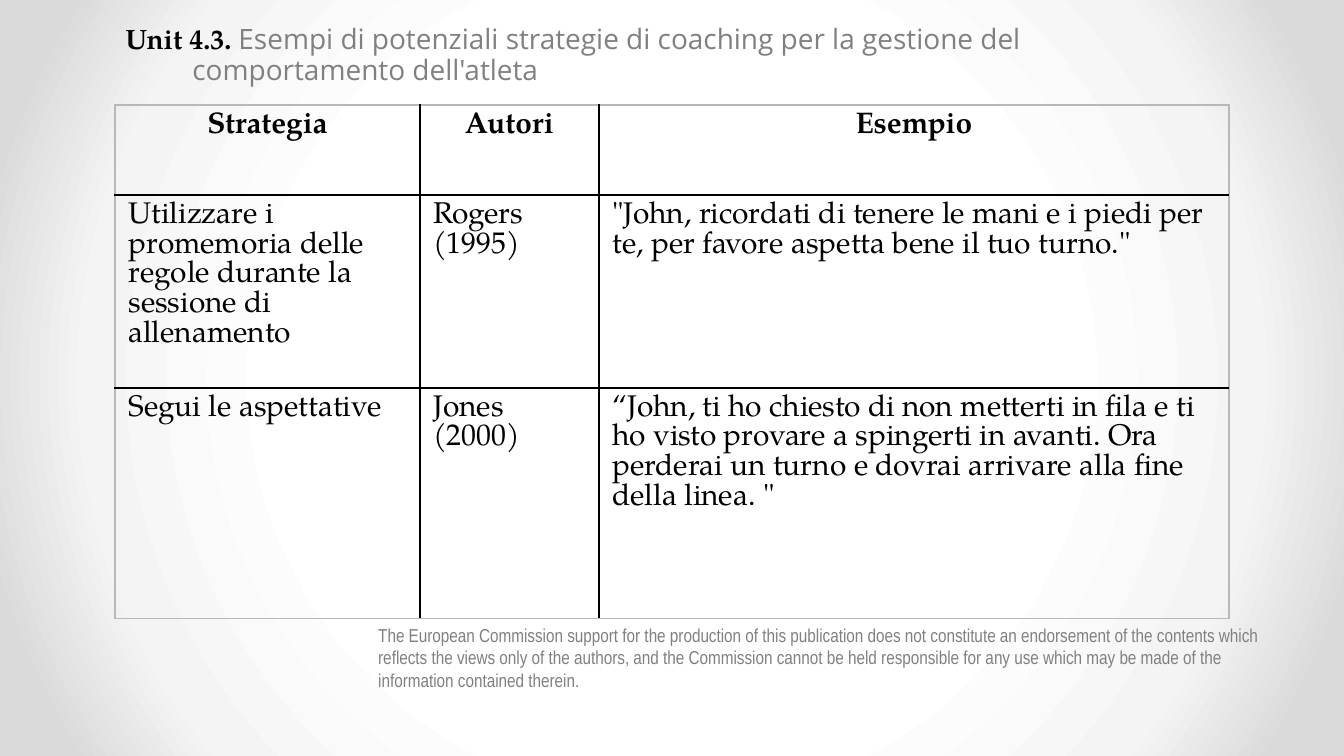
from lxml.etree import SubElement
from pptx import Presentation
from pptx.dml.color import RGBColor
from pptx.enum.text import MSO_ANCHOR, MSO_AUTO_SIZE, PP_ALIGN
from pptx.oxml import parse_xml
from pptx.oxml.ns import nsdecls, qn
from pptx.util import Emu, Pt

PX = 914400 / 134.4
BLACK = RGBColor(0x00, 0x00, 0x00)
GREY = RGBColor(0x80, 0x80, 0x80)
FRAME_GREY = RGBColor(0xB8, 0xB8, 0xB8)
BACKGROUND_STOPS = [
    (50, RGBColor(0xFF, 0xFF, 0xFF)),
    (76, RGBColor(0xF4, 0xF4, 0xF4)),
    (92, RGBColor(0xDA, 0xDA, 0xDA)),
]
SERIF, SANS, NARROW = "TeX Gyre Pagella", "Open Sans", "Arial Narrow"

COLUMN_WIDTHS = [305, 179, 630]
ROW_HEIGHTS = [90, 193, 231]
STRATEGIES = [
    ("Strategia", "Autori", "Esempio"),
    ("Utilizzare i promemoria delle regole durante la sessione di allenamento",
     "Rogers (1995)",
     "\"John, ricordati di tenere le mani e i piedi per te, per favore "
     "aspetta bene il tuo turno.\""),
    ("Segui le aspettative",
     "Jones (2000)",
     "“John, ti ho chiesto di non metterti in fila e ti ho visto provare a "
     "spingerti in avanti. Ora perderai un turno e dovrai arrivare alla fine "
     "della linea. \""),
]
DISCLAIMER = (
    "The European Commission support for the production of this publication "
    "does not constitute an endorsement of the contents which reflects the "
    "views only of the authors, and the Commission cannot be held responsible "
    "for any use which may be made of the information contained therein."
)


def px(length):
    return Emu(round(length * PX))


def add_span(para, text, font_name, size, color, bold=False):
    span = para.add_run()
    span.text = text
    font = span.font
    font.name, font.size, font.bold = font_name, Pt(size), bold
    font.color.rgb = color


def set_background(page):
    """Fill the page with a radial gradient around its centre."""
    page.background.fill.solid()
    properties = page.background._cSld.find(qn("p:bg")).find(qn("p:bgPr"))
    stops = "".join(
        f'<a:gs pos="{position * 1000}"><a:srgbClr val="{color}"/></a:gs>'
        for position, color in BACKGROUND_STOPS
    )
    gradient = parse_xml(
        f'<a:gradFill {nsdecls("a")} rotWithShape="1"><a:gsLst>{stops}</a:gsLst>'
        '<a:path path="circle"><a:fillToRect l="50000" t="50000" r="50000" '
        'b="50000"/></a:path></a:gradFill>'
    )
    properties.replace(properties.find(qn("a:solidFill")), gradient)


def add_title(page):
    title = page.shapes.title
    title.left, title.top, title.width, title.height = map(px, (112, 19, 1093, 82))
    frame = title.text_frame
    frame.word_wrap = True
    frame.auto_size = MSO_AUTO_SIZE.NONE
    frame.vertical_anchor = MSO_ANCHOR.TOP
    para = frame.paragraphs[0]
    para.alignment = PP_ALIGN.LEFT
    para.line_spacing = 0.9
    hanging = px(67)
    properties = para._p.get_or_add_pPr()
    properties.set("marL", str(hanging))
    properties.set("indent", str(-hanging))
    add_span(para, "Unit 4.3. ", SERIF, 15, BLACK, bold=True)
    add_span(para, "Esempi di potenziali strategie di coaching per la gestione "
             "del comportamento dell'atleta", SANS, 15, GREY)


def set_borders(cell, outer_sides):
    """Draw grey lines on the outer sides and black lines on the others."""
    properties = cell._tc.get_or_add_tcPr()
    for index, side in enumerate(("lnL", "lnR", "lnT", "lnB")):
        outer = side in outer_sides
        line = properties.makeelement(
            qn(f"a:{side}"), {"w": str(Pt(0.75 if outer else 1))})
        fill = SubElement(line, qn("a:solidFill"))
        color = FRAME_GREY if outer else BLACK
        SubElement(fill, qn("a:srgbClr"), val=str(color))
        properties.insert(index, line)


def fill_cell(cell, text, is_header):
    cell.fill.background()
    para = cell.text_frame.paragraphs[0]
    para.alignment = PP_ALIGN.CENTER if is_header else PP_ALIGN.LEFT
    para.line_spacing = Pt(16)
    add_span(para, text, SERIF, 16, BLACK, bold=is_header)


def add_strategy_table(page):
    last_row, last_column = len(ROW_HEIGHTS) - 1, len(COLUMN_WIDTHS) - 1
    table = page.shapes.add_table(
        len(ROW_HEIGHTS), len(COLUMN_WIDTHS), px(115), px(105),
        px(sum(COLUMN_WIDTHS)), px(sum(ROW_HEIGHTS))).table
    table.horz_banding = False
    for column, width in zip(table.columns, COLUMN_WIDTHS):
        column.width = px(width)
    for row, height in zip(table.rows, ROW_HEIGHTS):
        row.height = px(height)
    for row, texts in enumerate(STRATEGIES):
        for column, text in enumerate(texts):
            cell = table.cell(row, column)
            fill_cell(cell, text, is_header=row == 0)
            edges = {"lnL": column == 0, "lnR": column == last_column,
                     "lnT": row == 0, "lnB": row == last_row}
            set_borders(cell, [side for side, outer in edges.items() if outer])


def add_disclaimer(page):
    box = page.shapes.add_textbox(px(365), px(617), px(931), px(90))
    frame = box.text_frame
    frame.word_wrap = True
    add_span(frame.paragraphs[0], DISCLAIMER, NARROW, 10, GREY)


def main():
    deck = Presentation()
    deck.slide_width, deck.slide_height = px(1344), px(756)
    page = deck.slides.add_slide(deck.slide_layouts[5])
    set_background(page)
    add_disclaimer(page)
    add_strategy_table(page)
    add_title(page)
    deck.save("out.pptx")


if __name__ == "__main__":
    main()
